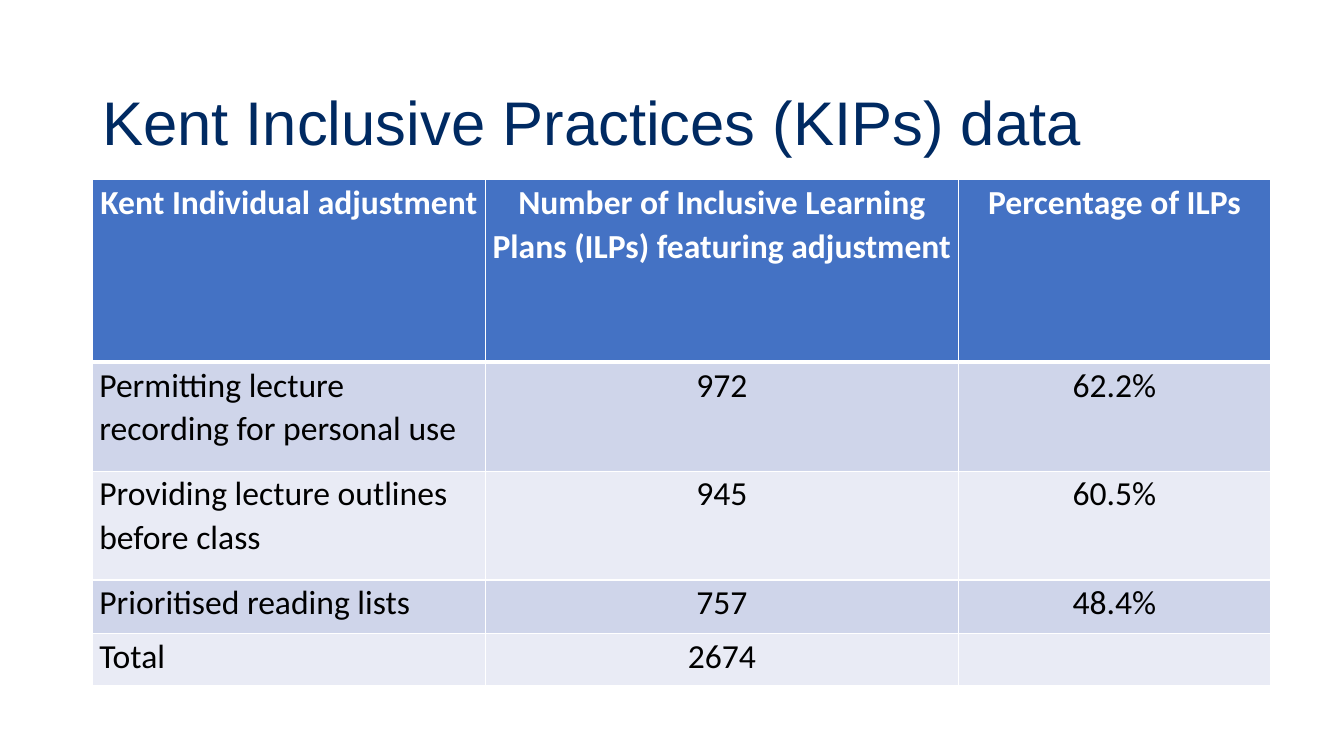
from lxml.etree import SubElement
from pptx import Presentation
from pptx.dml.color import RGBColor
from pptx.enum.text import MSO_ANCHOR as Anchor, PP_ALIGN as Align
from pptx.oxml.ns import qn
from pptx.util import Pt

COLOURS = {
    "title": "002A62",
    "header": "4472C4",
    "odd_row": "CFD5EA",
    "even_row": "E9EBF5",
    "white": "FFFFFF",
    "black": "000000",
}

HEADINGS = [
    "Kent Individual adjustment",
    "Number of Inclusive Learning Plans (ILPs) featuring adjustment",
    "Percentage of ILPs",
]
ADJUSTMENTS = [
    ("Permitting lecture recording for personal use", "972", "62.2%"),
    ("Providing lecture outlines before class", "945", "60.5%"),
    ("Prioritised reading lists", "757", "48.4%"),
    ("Total", "2674", ""),
]
COLUMN_WIDTHS = [280.8, 337.7, 223.2]
ROW_HEIGHTS = [130.3, 77.8, 77.8, 38.2, 37.4]


def colour(name):
    return RGBColor.from_string(COLOURS[name])


def add_run(paragraph, text, font_name, size, colour_name, bold=False):
    run = paragraph.add_run()
    run.text = text
    run.font.name = font_name
    run.font.size = Pt(size)
    run.font.bold = bold
    run.font.color.rgb = colour(colour_name)


def add_title(slide, left, top, width, height):
    title = slide.shapes.add_textbox(Pt(left), Pt(top), Pt(width), Pt(height))
    frame = title.text_frame
    frame.word_wrap = True
    frame.vertical_anchor = Anchor.MIDDLE
    paragraph = frame.paragraphs[0]
    paragraph.line_spacing = 0.9
    add_run(paragraph, "Kent Inclusive Practices (KIPs) data", "Arial", 44, "title")


def set_borders(cell, bottom_width):
    properties = cell._tc.get_or_add_tcPr()
    widths = {"a:lnL": 1, "a:lnR": 1, "a:lnT": 1, "a:lnB": bottom_width}
    for side, width in widths.items():
        line = SubElement(properties, qn(side), w=str(Pt(width)))
        fill = SubElement(line, qn("a:solidFill"))
        SubElement(fill, qn("a:srgbClr"), val=COLOURS["white"])


def fill_cell(cell, text, is_header, centred, fill_name):
    cell.margin_left = cell.margin_right = Pt(5)
    cell.margin_top = cell.margin_bottom = Pt(0)
    # Borders come before the fill in the cell properties
    set_borders(cell, 3 if is_header else 1)
    cell.fill.solid()
    cell.fill.fore_color.rgb = colour(fill_name)
    if text:
        paragraph = cell.text_frame.paragraphs[0]
        paragraph.alignment = Align.CENTER if centred else Align.LEFT
        paragraph.line_spacing = 1.07
        text_colour = "white" if is_header else "black"
        add_run(paragraph, text, "Calibri", 24, text_colour, is_header)


def add_adjustments_table(slide, left, top):
    rows = [HEADINGS, *ADJUSTMENTS]
    table = slide.shapes.add_table(
        len(rows), len(HEADINGS), Pt(left), Pt(top),
        Pt(sum(COLUMN_WIDTHS)), Pt(sum(ROW_HEIGHTS)),
    ).table
    for column, width in zip(table.columns, COLUMN_WIDTHS):
        column.width = Pt(width)
    for row, height in zip(table.rows, ROW_HEIGHTS):
        row.height = Pt(height)

    for r, texts in enumerate(rows):
        is_header = r == 0
        band = "odd_row" if r % 2 else "even_row"
        for c, text in enumerate(texts):
            fill_cell(table.cell(r, c), text, is_header,
                      centred=is_header or c > 0,
                      fill_name="header" if is_header else band)


def main():
    deck = Presentation()
    deck.slide_width, deck.slide_height = Pt(960), Pt(540)
    slide = deck.slides.add_slide(deck.slide_layouts[6])
    add_title(slide, 66, 37.5, 828, 104.4)
    add_adjustments_table(slide, 66, 128.5)
    deck.save("out.pptx")


if __name__ == "__main__":
    main()
